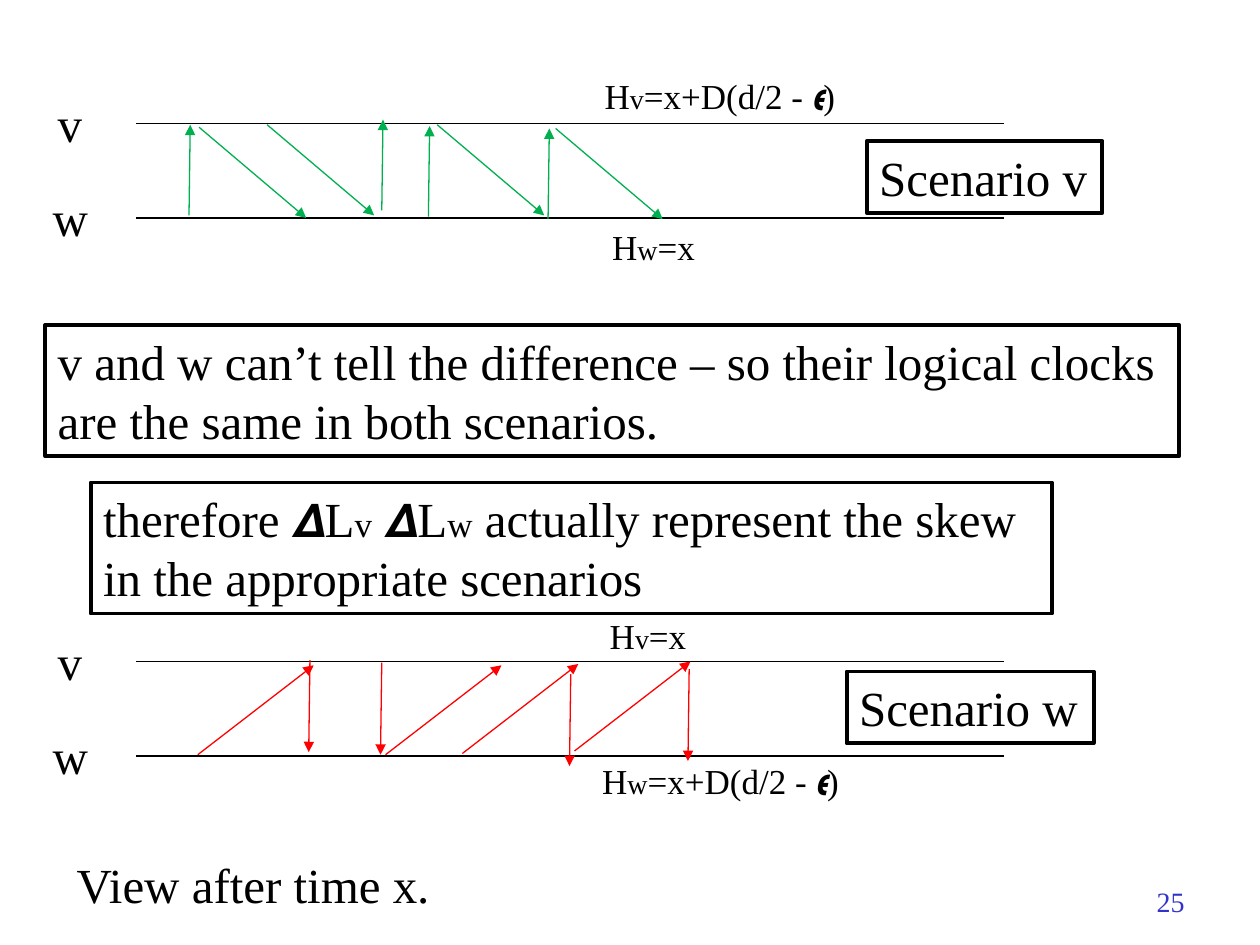
from lxml import etree
from pptx import Presentation, util as u
from pptx.dml.color import RGBColor
from pptx.enum import shapes, text
from pptx.oxml.ns import qn

BLACK, GREEN, RED, BLUE = "000000", "00B050", "FF0000", "3333CC"

presentation = Presentation()
presentation.slide_width, presentation.slide_height = u.Inches(10), u.Inches(7.5)
COLUMN = presentation.slide_width / 10
ROW = presentation.slide_height / 7.5
slide = presentation.slides.add_slide(presentation.slide_layouts[6])


def add_line(container, start, step, color, arrow=False):
    (x, y), (dx, dy) = start, step
    line = container.shapes.add_connector(
        shapes.MSO_CONNECTOR.STRAIGHT, int(x * COLUMN), int(y * ROW),
        int((x + dx) * COLUMN), int((y + dy) * ROW))
    line.line.color.rgb = RGBColor.from_string(color)
    line.line.width = u.Pt(0.75)
    if arrow:
        etree.SubElement(line.line._get_or_add_ln(), qn("a:tailEnd"), type="triangle")
    etree.SubElement(line._element.spPr, qn("a:effectLst"))


def add_text(container, place, paragraphs, size=28, small=16, color=BLACK, boxed=False):
    """Each paragraph is a list of runs; every second run is a small subscript."""
    left, top, width, height = place
    box = (int(left * COLUMN), int(top * ROW), int(width * COLUMN), int(height * ROW))
    if boxed:
        shape = container.shapes.add_shape(shapes.MSO_SHAPE.RECTANGLE, *box)
        shape.shadow.inherit = False
        shape.fill.background()
        shape.line.color.rgb = RGBColor.from_string(BLACK)
        shape.line.width = u.Pt(2.25)
    else:
        shape = container.shapes.add_textbox(*box)
    frame = shape.text_frame
    frame.word_wrap = False
    frame.auto_size = text.MSO_AUTO_SIZE.SHAPE_TO_FIT_TEXT
    frame.vertical_anchor = text.MSO_ANCHOR.TOP
    for index, runs in enumerate(paragraphs):
        paragraph = frame.add_paragraph() if index else frame.paragraphs[0]
        paragraph.alignment = text.PP_ALIGN.LEFT
        paragraph.font.name = "Times New Roman"
        paragraph.font.color.rgb = RGBColor.from_string(color)
        for position, words in enumerate(runs):
            run = paragraph.add_run()
            run.text = words
            run.font.name = "Times New Roman"
            run.font.color.rgb = RGBColor.from_string(color)
            run.font.size = u.Pt(small if position % 2 else size)
    return shape


# Slide number and caption
number = add_text(slide, (7.17, 6.95, 2.33, 0.4), [["25"]], size=16, color=BLUE)
number.text_frame.word_wrap = True
number.text_frame.auto_size = text.MSO_AUTO_SIZE.NONE
number.text_frame.vertical_anchor = text.MSO_ANCHOR.MIDDLE
number.text_frame.paragraphs[0].alignment = text.PP_ALIGN.RIGHT
add_text(slide, (0.51, 6.73, 3.03, 0.57), [["View after time x."]])

# Message diagrams: top timeline, colour, then arrow starts for each step
diagrams = [
    (0.98, GREEN, {
        (0.01, -0.72): [(1.5, 1.71), (3.03, 1.67), (3.4, 1.72), (4.35, 1.74)],
        (0.85, 0.72): [(1.58, 1.01), (2.12, 0.99), (3.47, 0.99), (4.41, 1.02)],
    }),
    (5.25, RED, {
        (0.92, -0.71): [(1.57, 5.99), (3.06, 5.99), (3.67, 5.98), (4.56, 5.96)],
        (-0.01, 0.73): [(2.46, 5.24), (3.03, 5.26), (4.53, 5.35), (5.47, 5.31)],
    }),
]
for top, color, messages in diagrams:
    group = slide.shapes.add_group_shape()
    for node, left, width, y in (("v", 0.36, 0.4, top), ("w", 0.32, 0.49, top + 0.75)):
        add_line(group, (1.08, y), (6.89, 0), BLACK)
        add_text(group, (left, y - 0.29, width, 0.57), [[node]])
    for step, starts in messages.items():
        for start in starts:
            add_line(group, start, step, color, arrow=True)

# Hardware clock values
for left, top, width, node, value in (
        (4.7, 0.54, 2.1, "v", "=x+D(d/2 - 𝟄)"),
        (4.76, 1.74, 0.86, "w", "=x"),
        (4.74, 4.83, 0.82, "v", "=x"),
        (4.68, 5.98, 2.15, "w", "=x+D(d/2 - 𝟄)")):
    add_text(slide, (left, top, width, 0.44), [["H", node, value]], size=20)

# Framed statements
for place, paragraphs in (
        ((6.88, 1.12, 1.87, 0.57), [["Scenario v"]]),
        ((6.72, 5.33, 1.96, 0.57), [["Scenario w"]]),
        ((0.36, 2.58, 9, 1.04), [
            ["v and w can’t tell the difference – so their logical clocks"],
            ["are the same in both scenarios."]]),
        ((0.72, 3.83, 7.63, 1.04), [
            ["therefore 𝞓L", "v", " 𝞓L", "w", " actually represent the skew"],
            ["in the appropriate scenarios"]])):
    add_text(slide, place, paragraphs, small=20, boxed=True)

presentation.save("out.pptx")
